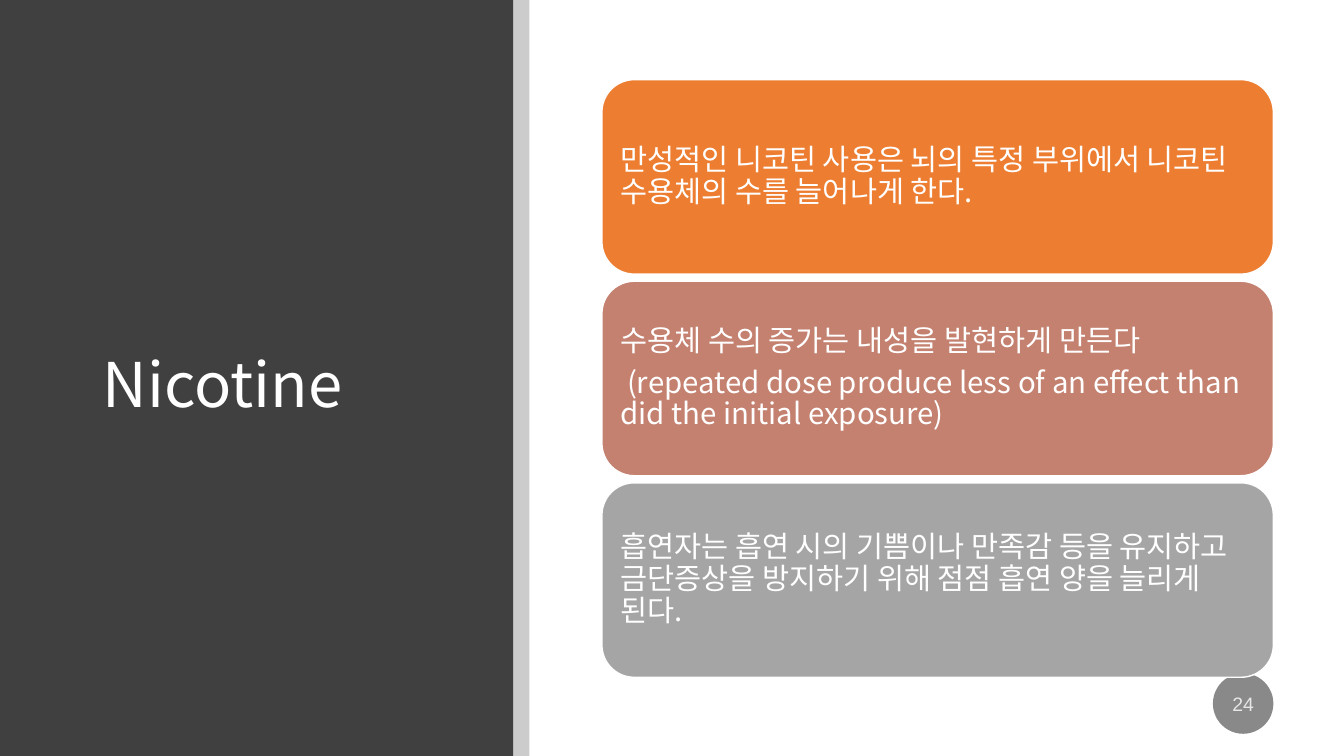
from lxml.etree import SubElement
from pptx import Presentation
from pptx.dml.color import RGBColor
from pptx.enum.shapes import MSO_SHAPE
from pptx.enum.text import MSO_ANCHOR, PP_ALIGN
from pptx.oxml.ns import qn
from pptx.util import Inches, Pt

COLORS = {"panel": "404040", "bar": "000000", "badge": "898989", "white": "FFFFFF",
          "orange": "ED7D31", "clay": "C48170", "gray": "A5A5A5"}
FONT = "Noto Sans CJK KR"
CARDS = [
    ("orange", "만성적인 니코틴 사용은 뇌의 특정 부위에서 니코틴 수용체의 수를 늘어나게 한다."),
    ("clay", "수용체 수의 증가는 내성을 발현하게 만든다\n"
             " (repeated dose produce less of an effect than did the initial exposure)"),
    ("gray", "흡연자는 흡연 시의 기쁨이나 만족감 등을 유지하고 금단증상을 방지하기 위해 "
             "점점 흡연 양을 늘리게 된다."),
]

prs = Presentation()
prs.slide_width, prs.slide_height = Inches(13.33), Inches(7.5)
s = prs.slides.add_slide(prs.slide_layouts[5])


def add_block(kind, x, y, w, h, color, alpha=None):
    sp = s.shapes.add_shape(kind, Inches(x), Inches(y), Inches(w), Inches(h))
    sp.shadow.inherit = False
    sp.fill.solid()
    sp.fill.fore_color.rgb = RGBColor.from_string(COLORS[color])
    sp.line.fill.background()
    if alpha:
        clr = sp.fill._xPr.find(qn("a:solidFill"))[0]
        SubElement(clr, qn("a:alpha"), val=str(alpha * 1000))
    return sp


def style_text(p, size, font, spacing=None, after=0):
    p.line_spacing, p.space_after = spacing, Pt(after)
    for r in p.runs:
        r.font.size, r.font.name = Pt(size), font
        r.font.color.rgb = RGBColor.from_string(COLORS["white"])
        SubElement(r.font._element, qn("a:ea"), typeface=font)


# Left panel and its translucent edge
panel = add_block(MSO_SHAPE.RECTANGLE, 0, 0, 5.09, 7.5, "panel")
add_block(MSO_SHAPE.RECTANGLE, 5.09, 0, 0.16, 7.5, "bar", alpha=20)

# Title, raised above the panel
title = s.shapes.title
s.shapes._spTree.append(title._element)
title.left, title.top, title.width, title.height = map(Inches, (0.92, 0.89, 3.65, 5.91))
tf = title.text_frame
tf.text = "Nicotine"
tf.vertical_anchor = MSO_ANCHOR.MIDDLE
p = tf.paragraphs[0]
p.alignment = PP_ALIGN.LEFT
style_text(p, 44, FONT, 0.9)

# Slide number badge
badge = add_block(MSO_SHAPE.OVAL, 12.03, 6.68, 0.6, 0.6, "badge")
tf = badge.text_frame
tf.text = "24"
tf.word_wrap = False
tf.vertical_anchor = MSO_ANCHOR.MIDDLE
tf.margin_left = tf.margin_right = tf.margin_top = tf.margin_bottom = 0
p = tf.paragraphs[0]
p.alignment = PP_ALIGN.CENTER
style_text(p, 13.9, "Arial", after=6)
SubElement(p.runs[0].font.fill._xPr.find(qn("a:solidFill"))[0], qn("a:alpha"), val="80000")

# Three stacked cards at an equal pitch
for i, (color, text) in enumerate(CARDS):
    card = add_block(MSO_SHAPE.ROUNDED_RECTANGLE, 5.97, 0.79 + i * 2, 6.66, 1.93, color)
    card.line.color.rgb = RGBColor.from_string(COLORS["white"])
    card.line.width = Pt(1)
    tf = card.text_frame
    tf.text = text
    tf.word_wrap = True
    tf.vertical_anchor = MSO_ANCHOR.MIDDLE
    tf.margin_left = tf.margin_right = tf.margin_top = tf.margin_bottom = Inches(0.09)
    for p in tf.paragraphs:
        p.alignment = PP_ALIGN.LEFT
        style_text(p, 21, FONT, 0.9, after=7.35)

prs.save("out.pptx")
